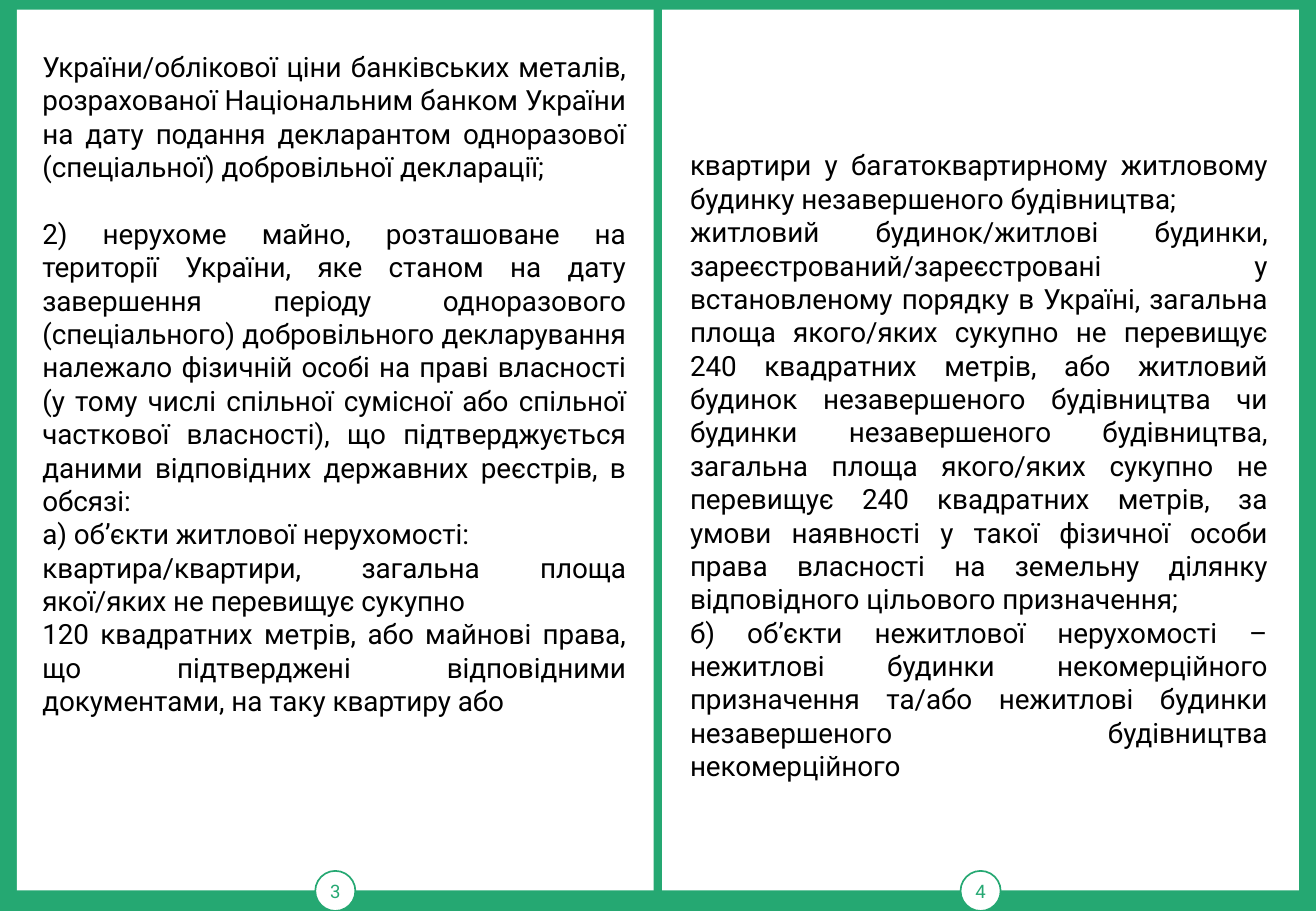
"""Build a two-page booklet spread about property covered by a voluntary declaration."""
from pptx import Presentation
from pptx.dml.color import RGBColor
from pptx.enum.shapes import MSO_SHAPE
from pptx.enum.text import MSO_ANCHOR, PP_ALIGN
from pptx.util import Inches, Pt

COLORS = {"green": "25A872", "white": "FFFFFF", "black": "000000"}
FONT = "Roboto"
BODY_SIZE = 16.5
SECTION_GAP = 19.8

PAGES = [
    {
        "number": "3",
        "left": 0.14,
        "text_box": (0.25, 0.36, 5, 5.8),
        "paragraphs": [
            ("України/облікової ціни банківських металів, розрахованої Національним банком "
             "України на дату подання декларантом одноразової (спеціальної) добровільної "
             "декларації;", 0),
            ("2) нерухоме майно, розташоване на території України, яке станом на дату "
             "завершення періоду одноразового (спеціального) добровільного декларування "
             "належало фізичній особі на праві власності (у тому числі спільної сумісної "
             "або спільної часткової власності), що підтверджується даними відповідних "
             "державних реєстрів, в обсязі:", SECTION_GAP),
            ("а) об’єкти житлової нерухомості:", 0),
            ("квартира/квартири, загальна площа якої/яких не перевищує сукупно", 0),
            ("120 квадратних метрів, або майнові права, що підтверджені відповідними "
             "документами, на таку квартиру або", 0),
        ],
    },
    {
        "number": "4",
        "left": 5.45,
        "text_box": (5.58, 1.17, 4.95, 5.4),
        "paragraphs": [
            ("квартири у багатоквартирному житловому будинку незавершеного будівництва;", 0),
            ("житловий будинок/житлові будинки, зареєстрований/зареєстровані у "
             "встановленому порядку в Україні, загальна площа якого/яких сукупно не "
             "перевищує 240 квадратних метрів, або житловий будинок незавершеного "
             "будівництва чи будинки незавершеного будівництва, загальна площа якого/яких "
             "сукупно не перевищує 240 квадратних метрів, за умови наявності у такої "
             "фізичної особи права власності на земельну ділянку відповідного цільового "
             "призначення;", 0),
            ("б) об’єкти нежитлової нерухомості – нежитлові будинки некомерційного "
             "призначення та/або нежитлові будинки незавершеного будівництва "
             "некомерційного", 0),
        ],
    },
]

SLIDE_W, SLIDE_H = 10.83, 7.5
PAGE_TOP, PAGE_W, PAGE_H = 0.08, 5.24, 7.25
BADGE = 0.33


def rgb(name):
    """Return the named palette colour."""
    return RGBColor.from_string(COLORS[name])


def write(p, text, size=BODY_SIZE, color="black", align=PP_ALIGN.JUSTIFY, before=0):
    """Put formatted text into a paragraph."""
    p.alignment = align
    if before:
        p.space_before = Pt(before)
    r = p.add_run()
    r.text = text
    r.font.name = FONT
    r.font.size = Pt(size)
    r.font.color.rgb = rgb(color)


def add_white_shape(s, kind, box, line=None):
    """Add a white preset shape with an optional outline."""
    sp = s.shapes.add_shape(kind, *map(Inches, box))
    sp.shadow.inherit = False
    sp.fill.solid()
    sp.fill.fore_color.rgb = rgb("white")
    if line:
        sp.line.color.rgb = rgb(line)
        sp.line.width = Pt(1)
    else:
        sp.line.fill.background()
    return sp


def add_page(s, page):
    """Draw one page sheet with its number badge."""
    add_white_shape(s, MSO_SHAPE.RECTANGLE, (page["left"], PAGE_TOP, PAGE_W, PAGE_H))
    badge_left = page["left"] + (PAGE_W - BADGE) / 2
    badge = add_white_shape(
        s, MSO_SHAPE.OVAL, (badge_left, SLIDE_H - BADGE, BADGE, BADGE), line="green")
    tf = badge.text_frame
    tf.margin_left = tf.margin_right = tf.margin_top = tf.margin_bottom = 0
    tf.vertical_anchor = MSO_ANCHOR.MIDDLE
    tf.word_wrap = False
    write(tf.paragraphs[0], page["number"], size=11, color="green", align=PP_ALIGN.CENTER)


def add_body(s, page):
    """Add the justified text of one page."""
    tf = s.shapes.add_textbox(*map(Inches, page["text_box"])).text_frame
    tf.word_wrap = True
    for i, (text, before) in enumerate(page["paragraphs"]):
        p = tf.add_paragraph() if i else tf.paragraphs[0]
        write(p, text, before=before)


def main():
    """Build and save the spread."""
    prs = Presentation()
    prs.slide_width, prs.slide_height = Inches(SLIDE_W), Inches(SLIDE_H)
    s = prs.slides.add_slide(prs.slide_layouts[6])
    s.background.fill.solid()
    s.background.fill.fore_color.rgb = rgb("green")
    for page in PAGES:
        add_page(s, page)
        add_body(s, page)
    prs.save("out.pptx")


if __name__ == "__main__":
    main()
